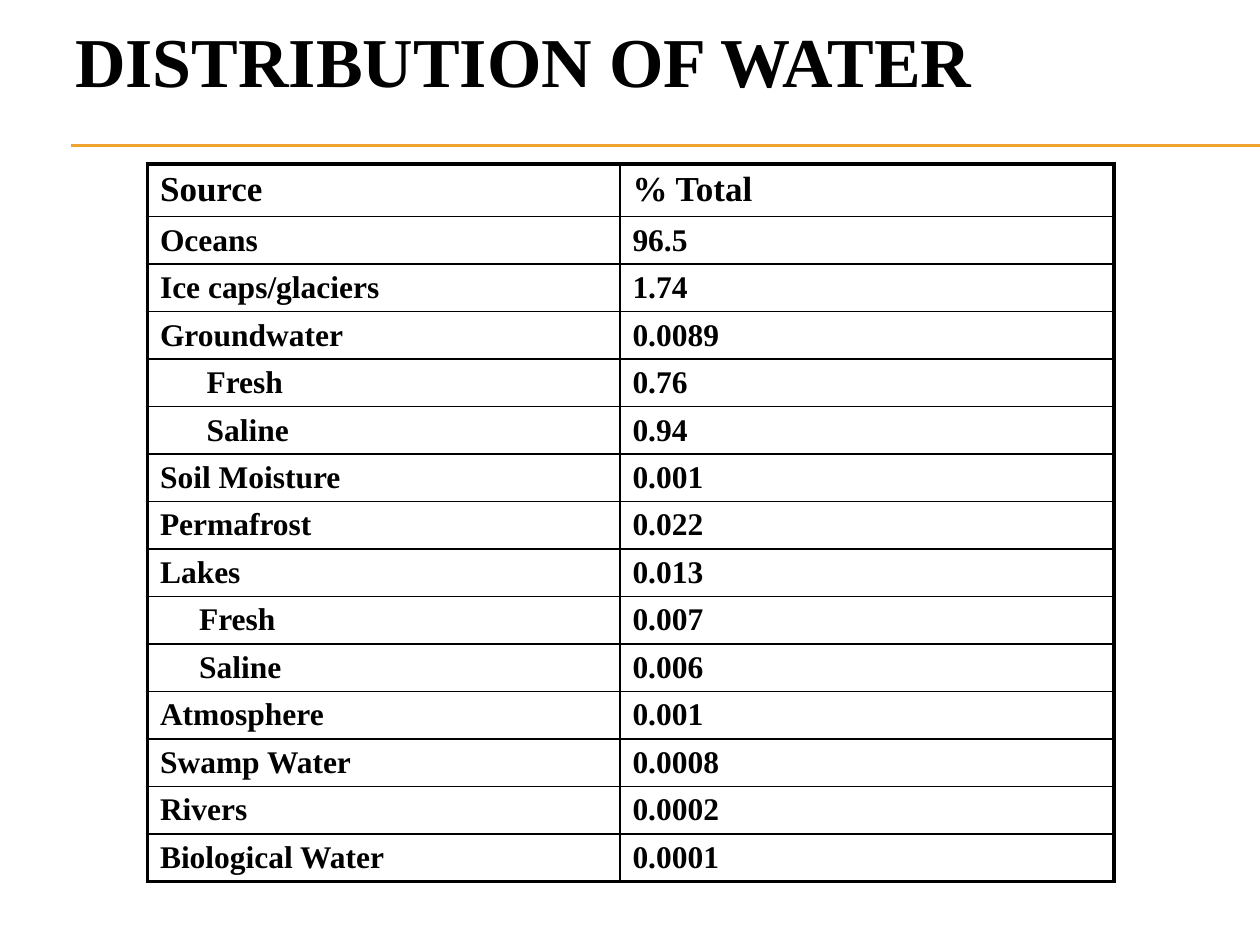
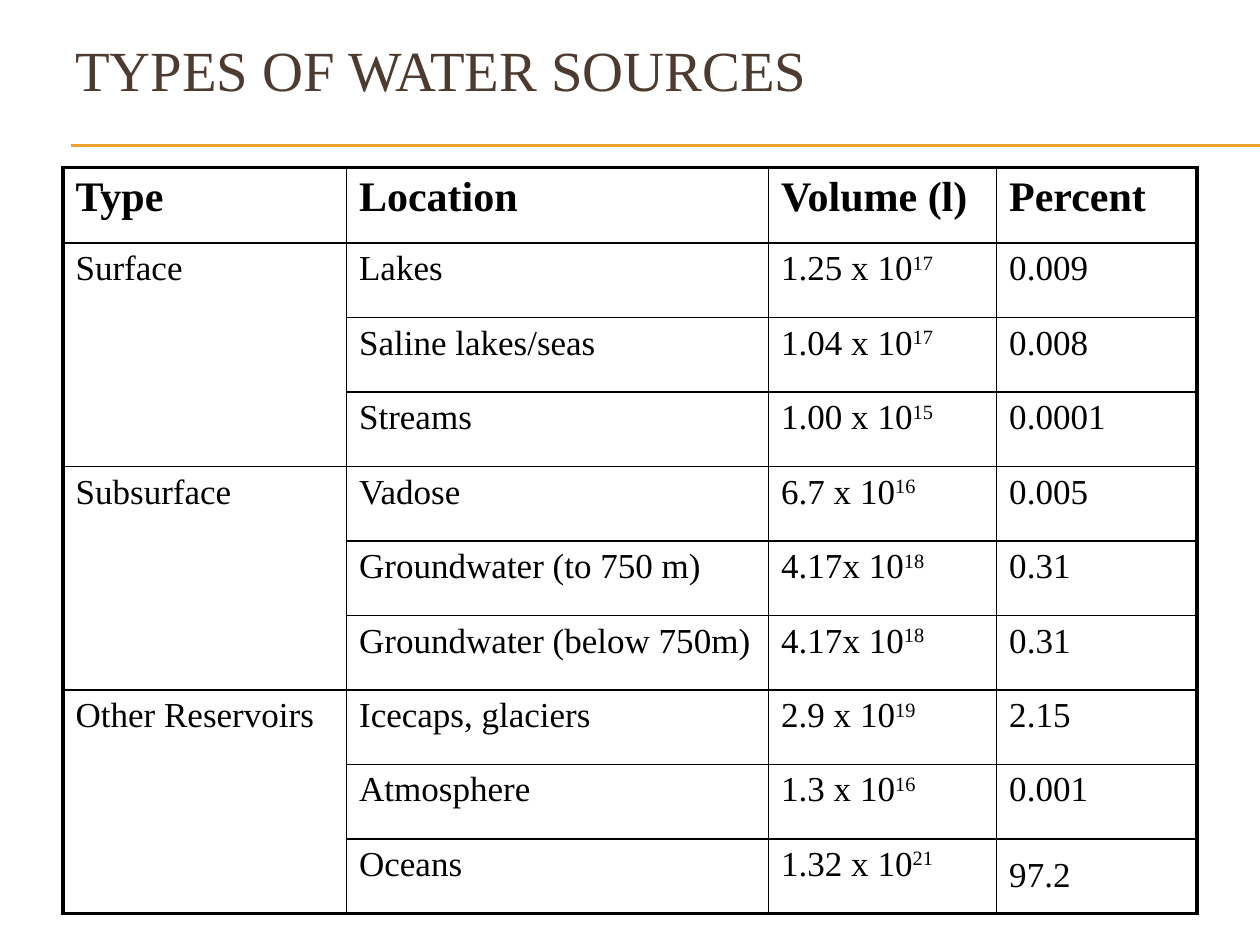
"""Build two slides on the distribution and the sources of water."""
import pptx
import pptx.dml.color
import pptx.enum.shapes
import pptx.enum.text
import pptx.oxml
import pptx.oxml.ns
import pptx.util

Inches = pptx.util.Inches
Pt = pptx.util.Pt
ANCHOR = pptx.enum.text.MSO_ANCHOR

FONT = "Times New Roman"
BLACK, BROWN, AMBER = "000000", "4E3B30", "F0A22E"
LINE_HEIGHT = 1.19
RULE_HEIGHTS = (1.15, 1.16)
OUTER_BORDER, INNER_BORDER = 2.25, 1

DISTRIBUTION = [
    ("Source", "% Total"),
    ("Oceans", "96.5"),
    ("Ice caps/glaciers", "1.74"),
    ("Groundwater", "0.0089"),
    ("Fresh", "0.76"),
    ("Saline", "0.94"),
    ("Soil Moisture", "0.001"),
    ("Permafrost", "0.022"),
    ("Lakes", "0.013"),
    ("Fresh", "0.007"),
    ("Saline", "0.006"),
    ("Atmosphere", "0.001"),
    ("Swamp Water", "0.0008"),
    ("Rivers", "0.0002"),
    ("Biological Water", "0.0001"),
]
SUBTYPE_INDENTS = {4: 0.37, 5: 0.37, 9: 0.31, 10: 0.31}

SOURCE_HEADINGS = ("Type", "Location", "Volume (l)", "Percent")
SOURCES = {
    "Surface": [
        ("Lakes", "1.25 x 10^17", "0.009"),
        ("Saline lakes/seas", "1.04 x 10^17", "0.008"),
        ("Streams", "1.00 x 10^15", "0.0001"),
    ],
    "Subsurface": [
        ("Vadose", "6.7 x 10^16", "0.005"),
        ("Groundwater (to 750 m)", "4.17x 10^18", "0.31"),
        ("Groundwater (below 750m)", "4.17x 10^18", "0.31"),
    ],
    "Other Reservoirs": [
        ("Icecaps, glaciers", "2.9 x 10^19", "2.15"),
        ("Atmosphere", "1.3 x 10^16", "0.001"),
        ("Oceans", "1.32 x 10^21", "97.2"),
    ],
}


def rgb(color):
    return pptx.dml.color.RGBColor.from_string(color)


def write(frame, text, size, color=BLACK, bold=False):
    paragraph = frame.paragraphs[0]
    base, _, exponent = text.partition("^")
    for part, baseline in ((base, None), (exponent, "30000")):
        if not part:
            continue
        run = paragraph.add_run()
        run.text = part
        run.font.name, run.font.size, run.font.bold = FONT, Pt(size), bold
        run.font.color.rgb = rgb(color)
        if baseline:
            run._r.get_or_add_rPr().set("baseline", baseline)


def add_titled_slide(deck, title, top, height, size, color, bold=False):
    slide = deck.slides.add_slide(deck.slide_layouts[6])
    for rule_height in RULE_HEIGHTS:
        rule = slide.shapes.add_connector(
            pptx.enum.shapes.MSO_CONNECTOR.STRAIGHT,
            Inches(0.56), Inches(rule_height), Inches(10), Inches(rule_height))
        rule.line.color.rgb = rgb(AMBER)
        rule.line.width = Pt(0.75)
        rule._element.spPr.append(pptx.oxml.parse_xml(
            f"<a:effectLst {pptx.oxml.ns.nsdecls('a')}/>"))
    heading = slide.shapes.add_textbox(
        Inches(0.5), Inches(top), Inches(9), Inches(height)).text_frame
    heading.word_wrap = True
    heading.vertical_anchor = ANCHOR.MIDDLE
    heading.margin_bottom = Inches(0.05 + size * LINE_HEIGHT / 72)
    write(heading, title, size, color, bold)
    return slide


def set_borders(cell, widths):
    properties = cell._tc.get_or_add_tcPr()
    for side, width in zip("LRTB", widths):
        properties.append(pptx.oxml.parse_xml(
            f'<a:ln{side} {pptx.oxml.ns.nsdecls("a")} w="{Pt(width)}">'
            f'<a:solidFill><a:srgbClr val="{BLACK}"/></a:solidFill></a:ln{side}>'))


def add_grid(slide, left, top, column_widths, row_heights):
    grid = slide.shapes.add_table(
        len(row_heights), len(column_widths), Inches(left), Inches(top),
        Inches(sum(column_widths)), Inches(sum(row_heights))).table
    grid.first_row = grid.horz_banding = False
    for column, width in zip(grid.columns, column_widths):
        column.width = Inches(width)
    for row, height in zip(grid.rows, row_heights):
        row.height = Inches(height)
    return grid


def fill_grid(grid, rows, heading_size, body_size, body_bold):
    last_row, last_column = len(rows) - 1, len(rows[0]) - 1
    for r, row in enumerate(rows):
        for c, text in enumerate(row):
            cell = grid.cell(r, c)
            bottom_row = r + cell.span_height - 1 if cell.is_merge_origin else r
            on_edge = (c == 0, c == last_column, r == 0, bottom_row == last_row)
            set_borders(cell, [OUTER_BORDER if edge else INNER_BORDER for edge in on_edge])
            cell.fill.background()
            write(cell.text_frame, text, body_size if r else heading_size,
                  bold=body_bold or r == 0)


def add_distribution(deck):
    slide = add_titled_slide(deck, "DISTRIBUTION OF WATER", 0.42, 0.77, 40, BLACK, bold=True)
    row_heights = [0.42] + [5.28 / 14] * (len(DISTRIBUTION) - 1)
    grid = add_grid(slide, 1.17, 1.3, (3.75, 3.92), row_heights)
    fill_grid(grid, DISTRIBUTION, 20, 18, body_bold=True)
    for cell in grid.iter_cells():
        cell.margin_bottom = Inches(0.01)
    for r, indent in SUBTYPE_INDENTS.items():
        grid.cell(r, 0).margin_left = Inches(0.1 + indent)


def add_sources(deck):
    slide = add_titled_slide(deck, "TYPES OF WATER SOURCES", 0.3, 1.03, 32.4, BROWN)
    rows = [SOURCE_HEADINGS]
    merges = []
    for kind, places in SOURCES.items():
        merges.append((len(rows), len(rows) + len(places) - 1))
        rows += [("" if i else kind, *place) for i, place in enumerate(places)]
    row_heights = [0.6] + [5.32 / 9] * (len(rows) - 1)
    grid = add_grid(slide, 0.5, 1.33, (2.25, 3.35, 1.81, 1.59), row_heights)
    for first, last in merges:
        grid.cell(first, 0).merge(grid.cell(last, 0))
    fill_grid(grid, rows, 24, 20, body_bold=False)
    grid.cell(len(rows) - 1, 3).vertical_anchor = ANCHOR.MIDDLE


def main():
    deck = pptx.Presentation()
    deck.slide_width, deck.slide_height = Inches(10), Inches(7.5)
    add_distribution(deck)
    add_sources(deck)
    deck.save("out.pptx")


if __name__ == "__main__":
    main()
